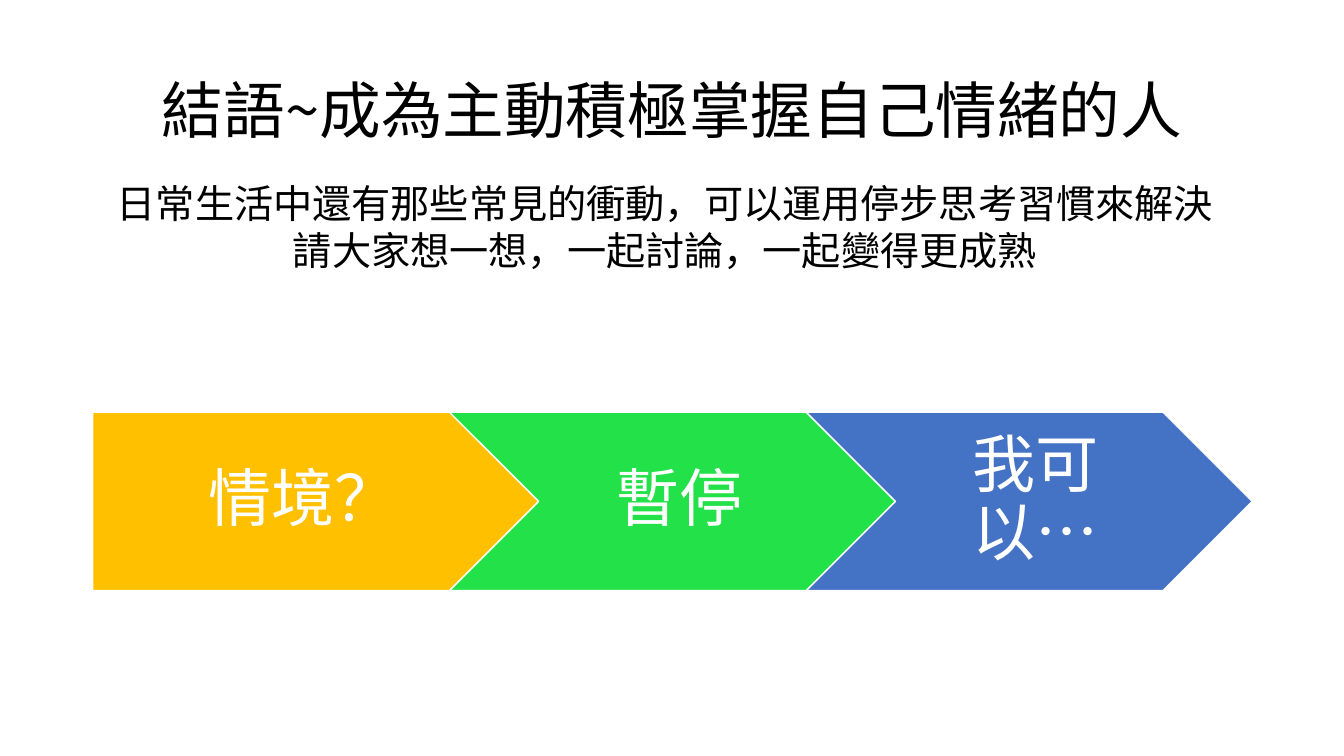
from dataclasses import dataclass

from lxml import etree
from pptx import Presentation
from pptx.dml.color import RGBColor
from pptx.enum.shapes import MSO_SHAPE
from pptx.enum.text import MSO_ANCHOR, PP_ALIGN
from pptx.oxml.ns import qn
from pptx.util import Inches, Pt

PENTAGON, CHEVRON = MSO_SHAPE.PENTAGON, MSO_SHAPE.CHEVRON
TOP, MIDDLE = MSO_ANCHOR.TOP, MSO_ANCHOR.MIDDLE
CENTER = PP_ALIGN.CENTER

TITLE = "結語~成為主動積極掌握自己情緒的人"
QUESTION = [
    "日常生活中還有那些常見的衝動，可以運用停步思考習慣來解決",
    "請大家想一想，一起討論，一起變得更成熟",
]
# label, outline, fill, left inset
STEPS = [
    ("情境？", PENTAGON, "FFC000", 0.26),
    ("暫停", CHEVRON, "23E148", 0.2),
    ("我可以…", CHEVRON, "4472C4", 0.2),
]


@dataclass(frozen=True)
class Theme:
    font: str = "Noto Sans CJK SC"
    ink: str = "000000"
    light: str = "FFFFFF"
    title_size: int = 44
    question_size: int = 28
    step_size: int = 45


THEME = Theme()
SLIDE_W, SLIDE_H = 13.33, 7.5
MARGIN = 0.92
CONTENT_W = 11.5
ADVANCE = 0.8  # each step starts this share of an arrow's width after the last
ARROW_W = CONTENT_W / (1 + ADVANCE * (len(STEPS) - 1))
ARROW_H = 0.4 * ARROW_W
ARROW_TOP = 4.09


def write(shape, lines, *, size, color=THEME.ink, anchor=MIDDLE,
          spacing=1.0, insets=(0.1, 0.05, 0.1, 0.05)):
    """Fill a shape with centred paragraphs; insets run left, top, right, bottom."""
    frame = shape.text_frame
    frame.word_wrap = True
    frame.vertical_anchor = anchor
    (frame.margin_left, frame.margin_top,
     frame.margin_right, frame.margin_bottom) = map(Inches, insets)
    for index, line in enumerate(lines):
        paragraph = frame.add_paragraph() if index else frame.paragraphs[0]
        paragraph.alignment = CENTER
        paragraph.line_spacing = spacing
        run = paragraph.add_run()
        run.text = line
        run.font.size = Pt(size)
        run.font.name = THEME.font
        run.font.color.rgb = RGBColor.from_string(color)
        east_asian = etree.SubElement(run.font._element, qn("a:ea"))
        east_asian.set("typeface", THEME.font)


def add_step(slide, index, label, outline, fill, left_inset):
    left = MARGIN + index * ADVANCE * ARROW_W
    arrow = slide.shapes.add_shape(
        outline, Inches(left), Inches(ARROW_TOP), Inches(ARROW_W), Inches(ARROW_H))
    arrow.shadow.inherit = False
    arrow.fill.solid()
    arrow.fill.fore_color.rgb = RGBColor.from_string(fill)
    arrow.line.color.rgb = RGBColor.from_string(THEME.light)
    arrow.line.width = Pt(1)
    write(arrow, [label], size=THEME.step_size, color=THEME.light,
          spacing=0.9, insets=(left_inset, 0.13, 0.07, 0.13))


def main():
    deck = Presentation()
    deck.slide_width, deck.slide_height = Inches(SLIDE_W), Inches(SLIDE_H)
    slide = deck.slides.add_slide(deck.slide_layouts[6])

    title = slide.shapes.add_textbox(
        Inches(MARGIN), Inches(0.4), Inches(CONTENT_W), Inches(1.45))
    write(title, [TITLE], size=THEME.title_size, spacing=0.9)

    for index, step in enumerate(STEPS):
        add_step(slide, index, *step)

    question = slide.shapes.add_textbox(
        Inches(1.03), Inches(1.73), Inches(11.13), Inches(1.04))
    write(question, QUESTION, size=THEME.question_size, anchor=TOP)

    deck.save("out.pptx")


if __name__ == "__main__":
    main()
